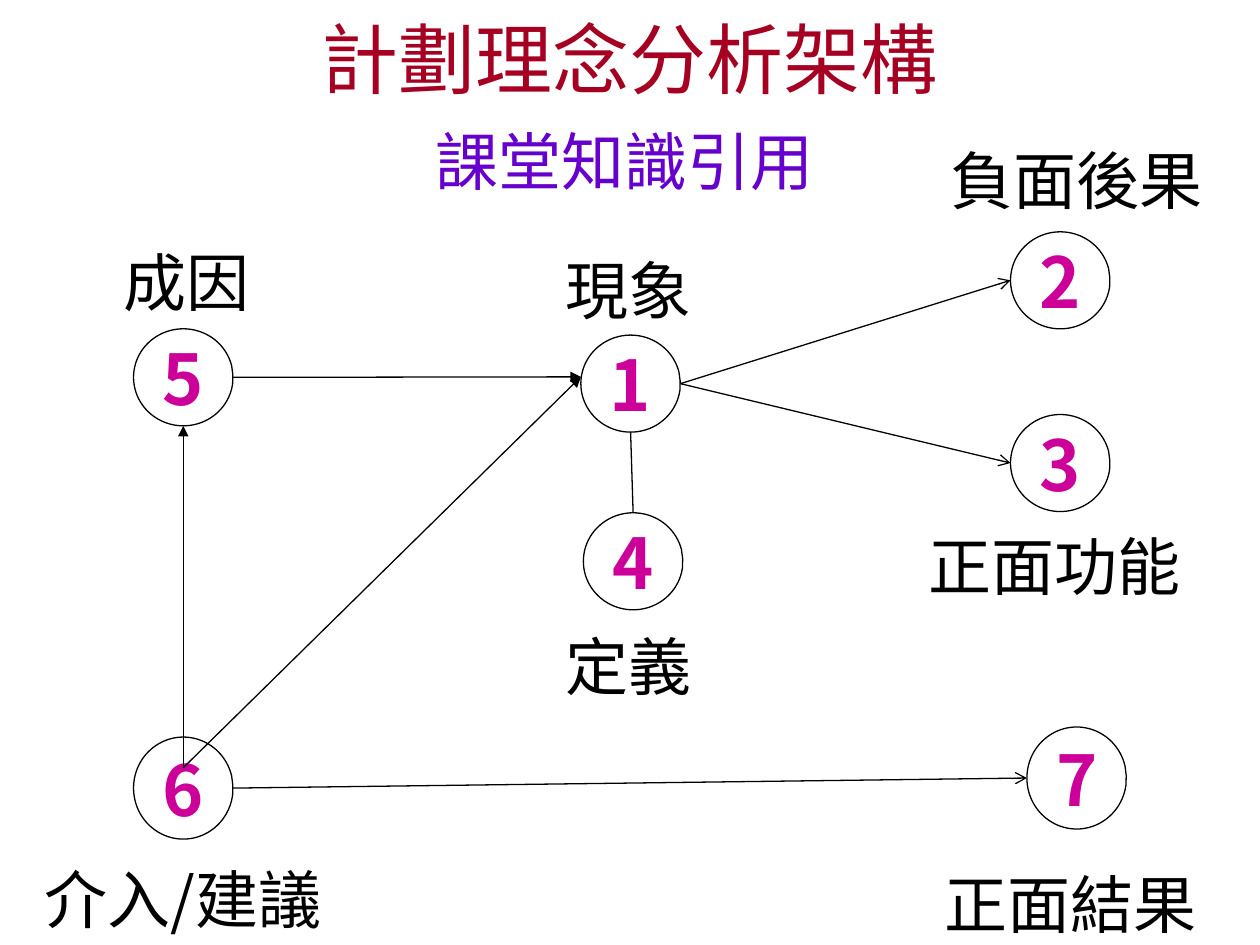
from dataclasses import dataclass

import pptx
import pptx.dml.color
import pptx.enum.shapes
import pptx.enum.text
import pptx.oxml
import pptx.oxml.ns
import pptx.util


@dataclass(frozen=True)
class Theme:
    font: str = "Noto Sans CJK SC"
    title: str = "A50021"
    subtitle: str = "6600CC"
    ink: str = "000000"
    number: str = "CC0099"
    title_size: int = 44
    label_size: int = 36
    number_size: int = 40
    line: float = 0.75


@dataclass(frozen=True)
class Box:
    """A region in inches, divided into cells of a tenth of an inch."""
    x: float
    y: float
    w: float
    h: float

    def cells(self, col, row, cols, rows):
        return Box(self.x + col / 10, self.y + row / 10, cols / 10, rows / 10)

    def point(self, across, down):
        return (pptx.util.Inches(self.x + self.w * across),
                pptx.util.Inches(self.y + self.h * down))

    def emu(self):
        return [pptx.util.Inches(v) for v in (self.x, self.y, self.w, self.h)]


THEME = Theme()
SLIDE = Box(0, 0, 10, 7.5)
LABEL_ROWS = 7.1
NODE_COLS = 7.9

# number: column, row, height in rows
NODES = {
    "1": (46.1, 16.6, 7.7),
    "2": (80.2, 8.4, 7.7),
    "3": (80.2, 22.9, 7.7),
    "4": (46.3, 30.7, 7.7),
    "5": (10.6, 16.1, 7.7),
    "6": (10.6, 48.5, 8.1),
    "7": (81.5, 47.7, 8.1),
}

# text, column, row, width in columns
LABELS = [
    ("現象 ", 36.3, 9.5, 28.3),
    ("負面後果", 70.3, 0.7, 30.2),
    ("正面功能", 67.4, 31.4, 32.5),
    ("定義 ", 42.3, 39.3, 16.2),
    ("成因", 2.2, 8.8, 25.2),
    ("介入/建議", 0.4, 57.8, 28.3),
    ("正面結果", 72, 58.2, 26),
]

# start node and share of its box, end node and share, arrowhead
LEFT, RIGHT, TOP, BOTTOM = (0, 0.5), (1, 0.5), (0.5, 0), (0.5, 1)
CAUSE_ENTRY, ACTION_EXIT = (0, 0.43), (0.5, 0.3)
LINKS = [
    ("1", RIGHT, "2", LEFT, "arrow"),
    ("1", RIGHT, "3", LEFT, "arrow"),
    ("6", RIGHT, "7", LEFT, "arrow"),
    ("5", RIGHT, "1", CAUSE_ENTRY, "triangle"),
    ("1", BOTTOM, "4", TOP, None),
    ("6", ACTION_EXIT, "5", BOTTOM, "triangle"),
    ("6", ACTION_EXIT, "1", CAUSE_ENTRY, "triangle"),
]


def rgb(value):
    return pptx.dml.color.RGBColor.from_string(value)


def write(tf, text, size, color, bold=False):
    p = tf.paragraphs[0]
    p.alignment = pptx.enum.text.PP_ALIGN.CENTER
    r = p.add_run()
    r.text = text
    r.font.size = pptx.util.Pt(size)
    r.font.bold = bold
    r.font.color.rgb = rgb(color)
    r.font.name = THEME.font
    # East Asian text takes its own typeface
    ea = pptx.oxml.parse_xml(
        f'<a:ea {pptx.oxml.ns.nsdecls("a")} typeface="{THEME.font}"/>')
    r.font._element.find(pptx.oxml.ns.qn("a:latin")).addnext(ea)


def add_text(slide, box, text, size, color, wrap=True):
    tf = slide.shapes.add_textbox(*box.emu()).text_frame
    tf.word_wrap = wrap
    write(tf, text, size, color)
    return tf


def add_node(slide, box, number):
    sp = slide.shapes.add_shape(
        pptx.enum.shapes.MSO_SHAPE.OVAL_CALLOUT, *box.emu())
    sp.adjustments[0], sp.adjustments[1] = 0.498, -0.026
    sp.shadow.inherit = False
    sp.fill.background()
    sp.line.color.rgb = rgb(THEME.ink)
    sp.line.width = pptx.util.Pt(THEME.line)
    sp.text_frame.vertical_anchor = pptx.enum.text.MSO_ANCHOR.MIDDLE
    write(sp.text_frame, number, THEME.number_size, THEME.number, bold=True)


def add_link(slide, start, end, head):
    line = slide.shapes.add_connector(
        pptx.enum.shapes.MSO_CONNECTOR.STRAIGHT, *start, *end)
    line.line.color.rgb = rgb(THEME.ink)
    line.line.width = pptx.util.Pt(THEME.line)
    ns = pptx.oxml.ns.nsdecls("a")
    if head:
        line.line._get_or_add_ln().append(
            pptx.oxml.parse_xml(f'<a:tailEnd {ns} type="{head}"/>'))
    line._element.spPr.append(pptx.oxml.parse_xml(f"<a:effectLst {ns}/>"))


def build_header(slide, box):
    # Title across the full width, subtitle below it
    tf = add_text(slide, box.cells(0, 0, 100, 9.1), "計劃理念分析架構",
                  THEME.title_size, THEME.title)
    tf.vertical_anchor = pptx.enum.text.MSO_ANCHOR.MIDDLE
    add_text(slide, box.cells(33.4, 9.2, 32.3, LABEL_ROWS), "課堂知識引用",
             THEME.label_size, THEME.subtitle, wrap=False)


def build_diagram(slide, box):
    # Labels
    for text, col, row, cols in LABELS:
        tf = add_text(slide, box.cells(col, row, cols, LABEL_ROWS), text,
                      THEME.label_size, THEME.ink)
        tf.auto_size = pptx.enum.text.MSO_AUTO_SIZE.SHAPE_TO_FIT_TEXT
    # Numbered nodes
    nodes = {number: box.cells(col, row, NODE_COLS, rows)
             for number, (col, row, rows) in NODES.items()}
    for number, node in nodes.items():
        add_node(slide, node, number)
    # Links between nodes
    for a, exit_at, b, entry_at, head in LINKS:
        add_link(slide, nodes[a].point(*exit_at),
                 nodes[b].point(*entry_at), head)


def main():
    prs = pptx.Presentation()
    prs.slide_width = pptx.util.Inches(SLIDE.w)
    prs.slide_height = pptx.util.Inches(SLIDE.h)
    slide = prs.slides.add_slide(prs.slide_layouts[6])
    build_header(slide, SLIDE.cells(0, 0, 100, 17))
    build_diagram(slide, SLIDE.cells(0, 10, 100, 65))
    prs.save("out.pptx")


if __name__ == "__main__":
    main()
